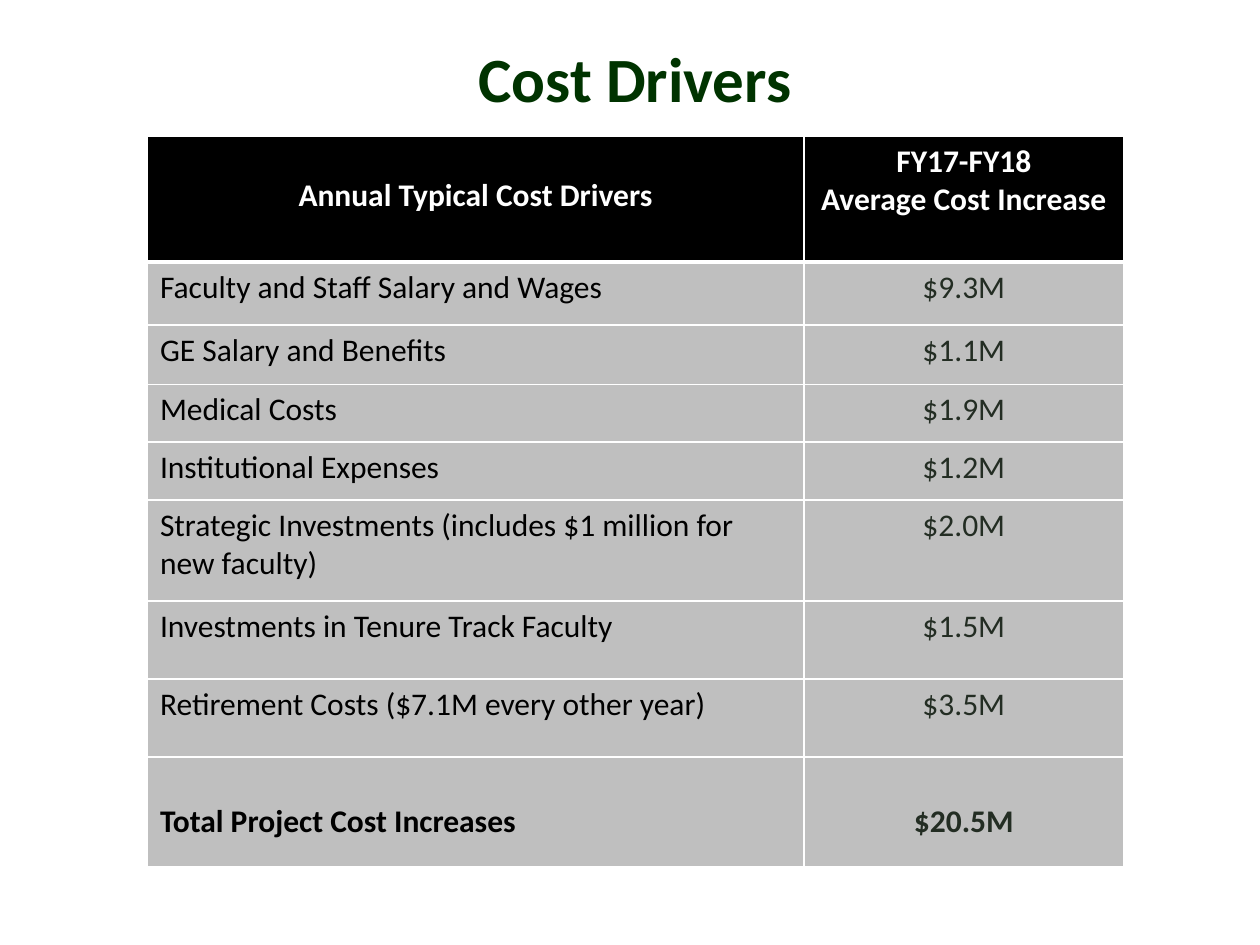
"""Build the Cost Drivers slide: a title above a two-column cost table."""
from typing import NamedTuple

from lxml.etree import SubElement
from pptx import Presentation
from pptx.dml.color import RGBColor
from pptx.enum.text import MSO_ANCHOR, PP_ALIGN
from pptx.oxml.ns import qn
from pptx.util import Inches, Pt

FONT = "Calibri"
HUES = {
    "title": "003300",
    "head": "000000",
    "body": "BFBFBF",
    "label": "000000",
    "cost": "232D23",
    "white": "FFFFFF",
}
COLS = (5.21, 2.54)


class Row(NamedTuple):
    label: str
    cost: str
    height: float
    bold: bool = False
    drop: float = 0.05


HEAD = ("Annual Typical Cost Drivers", "FY17-FY18\nAverage Cost Increase")
ROWS = (
    Row("Faculty and Staff Salary and Wages", "$9.3M", 0.5),
    Row("GE Salary and Benefits", "$1.1M", 0.47),
    Row("Medical Costs", "$1.9M", 0.46),
    Row("Institutional Expenses", "$1.2M", 0.46),
    Row("Strategic Investments (includes $1 million for new faculty)", "$2.0M", 0.8),
    Row("Investments in Tenure Track Faculty", "$1.5M", 0.62),
    Row("Retirement Costs ($7.1M every other year)", "$3.5M", 0.62),
    Row("Total Project Cost Increases", "$20.5M", 0.87, True, 0.36),
)


def write(frame, text: str, size: int, hue: str, bold: bool, align) -> None:
    """Write each line of text as one paragraph with one run."""
    for i, line in enumerate(text.split("\n")):
        para = frame.paragraphs[0] if i == 0 else frame.add_paragraph()
        para.alignment = align
        run = para.add_run()
        run.text = line
        font = run.font
        font.name, font.size, font.bold = FONT, Pt(size), bold
        font.color.rgb = RGBColor.from_string(HUES[hue])


def edge(cell, top: int, base: int) -> None:
    """Give a cell white borders with its own top and bottom widths."""
    props = cell._tc.get_or_add_tcPr()
    for tag, width in (("lnL", 1), ("lnR", 1), ("lnT", top), ("lnB", base)):
        line = SubElement(props, qn(f"a:{tag}"), w=str(Pt(width)))
        fill = SubElement(line, qn("a:solidFill"))
        SubElement(fill, qn("a:srgbClr"), val=HUES["white"])


def paint(cell, fill: str, drop: float, top: int = 1, base: int = 1) -> None:
    """Set the borders, fill and top margin of a cell."""
    edge(cell, top, base)
    cell.fill.solid()
    cell.fill.fore_color.rgb = RGBColor.from_string(HUES[fill])
    cell.margin_top = Inches(drop)


def add_title(slide) -> None:
    """Add the centred slide title."""
    box = slide.shapes.add_textbox(Inches(0.33), Inches(0), Inches(9.42), Inches(1.22))
    frame = box.text_frame
    frame.word_wrap = True
    frame.vertical_anchor = MSO_ANCHOR.MIDDLE
    write(frame, "Cost Drivers", 36, "title", True, PP_ALIGN.CENTER)


def add_costs(slide) -> None:
    """Add the table of cost drivers."""
    high = 1 + sum(row.height for row in ROWS)
    table = slide.shapes.add_table(
        len(ROWS) + 1, len(COLS), Inches(1.17), Inches(1.08),
        Inches(sum(COLS)), Inches(high),
    ).table
    for col, width in zip(table.columns, COLS):
        col.width = Inches(width)

    table.rows[0].height = Inches(1)
    for c, (text, drop) in enumerate(zip(HEAD, (0.32, 0.05))):
        cell = table.cell(0, c)
        paint(cell, "head", drop, base=3)
        write(cell.text_frame, text, 18, "white", True, PP_ALIGN.CENTER)

    for r, row in enumerate(ROWS, 1):
        table.rows[r].height = Inches(row.height)
        pairs = ((row.label, "label", PP_ALIGN.LEFT), (row.cost, "cost", PP_ALIGN.CENTER))
        for c, (text, hue, align) in enumerate(pairs):
            cell = table.cell(r, c)
            paint(cell, "body", row.drop, top=3 if r == 1 else 1)
            write(cell.text_frame, text, 18, hue, row.bold, align)


def main() -> None:
    """Build and save the deck."""
    deck = Presentation()
    deck.slide_width, deck.slide_height = Inches(10), Inches(7.5)
    slide = deck.slides.add_slide(deck.slide_layouts[6])
    add_title(slide)
    add_costs(slide)
    deck.save("out.pptx")


if __name__ == "__main__":
    main()
